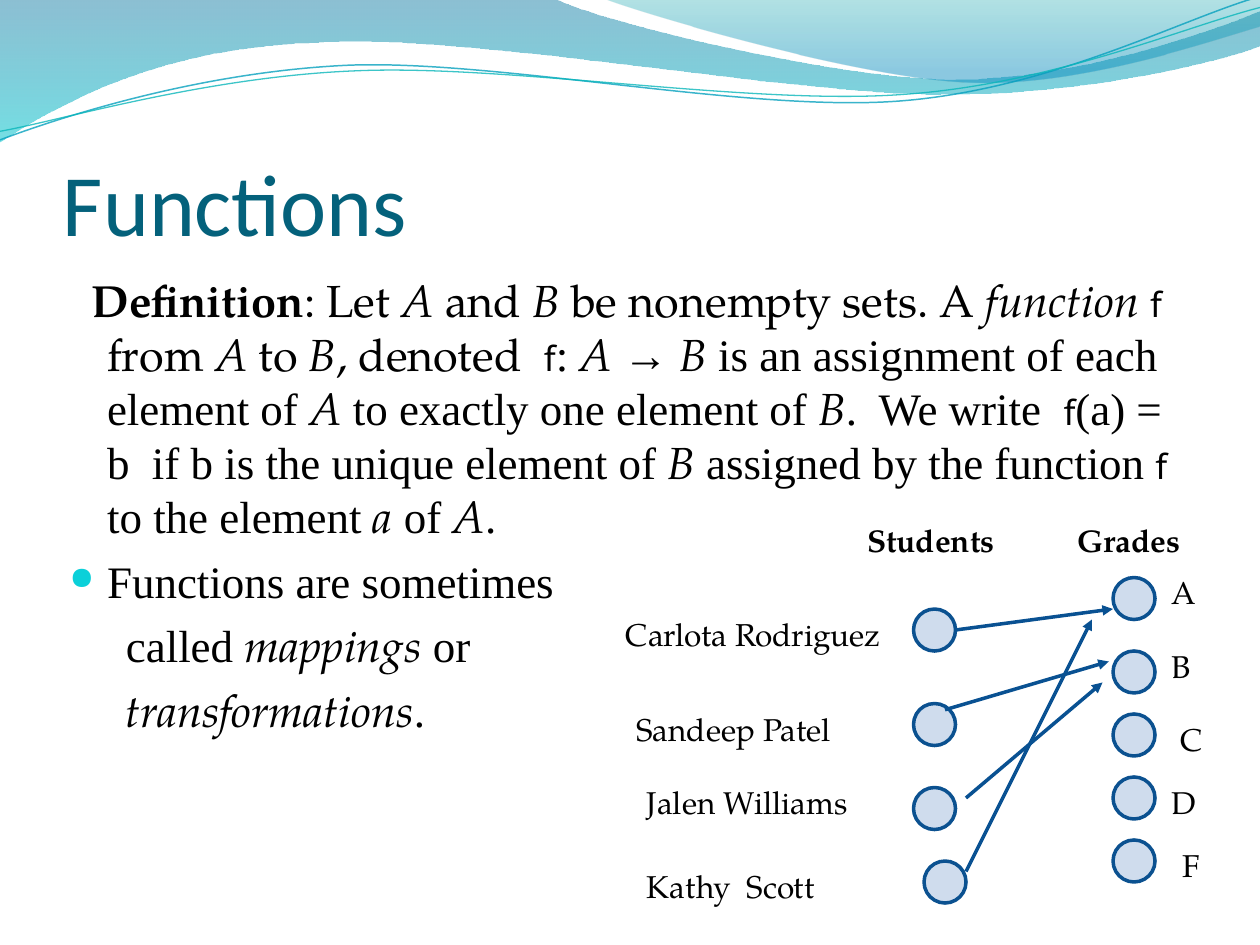
from dataclasses import dataclass
from typing import NamedTuple

from lxml import etree
from pptx import Presentation, util as u
from pptx.dml.color import RGBColor
from pptx.enum import shapes, text
from pptx.oxml.ns import qn

COLUMNS, ROWS = 120, 90
CELL = u.Inches(1 / 12)
CIRCLE = 4


class Face(NamedTuple):
    font: str
    size: float
    bold: bool = False
    italic: bool = False


@dataclass(frozen=True)
class Theme:
    title: str = "04617B"
    ink: str = "000000"
    bullet: str = "0BD0D9"
    circle: str = "4F81BD"
    outline: str = "0B5190"
    arrow: str = "095192"
    heading: Face = Face("Calibri", 50)
    serif: Face = Face("TeX Gyre Pagella", 25.7)
    strong: Face = Face("TeX Gyre Pagella", 25.7, bold=True)
    italic: Face = Face("TeX Gyre Pagella", 25.7, italic=True)
    times: Face = Face("Times New Roman", 25.7)
    symbol: Face = Face("Noto Sans", 19.8)
    label: Face = Face("TeX Gyre Pagella", 18)
    label_bold: Face = Face("TeX Gyre Pagella", 18, bold=True)


THEME = Theme()


class Box(NamedTuple):
    column: float
    row: float
    columns: float
    rows: float = 5


class Stop(NamedTuple):
    position: float
    color: str
    alpha: int


class Wave(NamedTuple):
    """Points are percentages of the slide's size; six numbers make a curve, two a straight line."""
    start: tuple
    segments: list
    stops: tuple = ()
    line: str = ""
    width: float = 0


class Node(NamedTuple):
    column: float
    row: float
    label: str
    label_box: Box


class Paragraph(NamedTuple):
    runs: list
    left: float
    indent: float = 0
    bullet: str = ""


WAVES = [
    Wave((0, 0), [(44, -0.1), (47.6, 2.3, 66.4, 8.4, 75.8, 8.4), (85.3, 8.4, 95.8, 3.5, 100, 1.2),
                  (100.1, 4.8), (98.3, 5.9, 87, 10.1, 74.6, 10), (62.2, 10, 38.2, 3.7, 25.7, 4.5),
                  (12.9, 4.8, 4.6, 11.1, -0.1, 15.1)],
         stops=(Stop(0, "00739E", 45), Stop(1, "00C5CE", 55))),
    Wave((47.9, -0.1), [(50.9, 1.5, 68.2, 8.3, 76.9, 8.7), (85.6, 9.2, 96.1, 4.3, 100, 2.8), (100, 0)],
         stops=(Stop(0, "009FA6", 30), Stop(0.8, "008ABE", 45))),
    Wave((0, 14.8), [(4.8, 12.4, 15.8, 7.6, 27.7, 6.9), (39.5, 6.3, 59.3, 11.9, 71.3, 10.7),
                     (83.3, 9.5, 93.8, 2, 99.8, -0.3)], line="05A0BE", width=0.85),
    Wave((0, 13.9), [(4.7, 12.8, 16.4, 8.1, 28.3, 7.5), (40.3, 6.8, 59.7, 11.2, 71.7, 10),
                     (83.6, 8.9, 94.1, 2.8, 100, 0.8)], line="08B6BA", width=0.75),
]

SET_A, SET_B = ("A", THEME.italic), ("B", THEME.italic)
F = ("f", THEME.symbol)
BODY = [
    Paragraph([
        ("Definition", THEME.strong), (": Let ", THEME.serif), SET_A, (" and ", THEME.serif),
        ("B ", THEME.italic), ("be nonempty sets. A ", THEME.serif), ("function ", THEME.italic), F,
        (" from ", THEME.serif), SET_A, (" to ", THEME.serif), SET_B,
        (", denoted  ", THEME.serif), F, (": ", THEME.times), SET_A, (" → ", THEME.times), SET_B,
        (" is an assignment of each element of ", THEME.times), SET_A,
        (" to exactly one element of ", THEME.times), SET_B, (".  We write  ", THEME.times), F,
        ("(a) = b  if b is the unique element of ", THEME.times), SET_B,
        (" assigned by the function ", THEME.times), F, (" to the element ", THEME.times),
        ("a", THEME.italic), (" of ", THEME.times), SET_A, (".", THEME.times),
    ], left=0.3, indent=-0.12),
    Paragraph([("Functions are sometimes", THEME.times)], left=0.3, indent=-0.3, bullet="●"),
    Paragraph([("called ", THEME.times), ("mappings", THEME.italic), (" or", THEME.times)], left=0.45),
    Paragraph([("transformations", THEME.italic), (".", THEME.times)], left=0.45),
]

NODES = [
    Node(87, 58, "Carlota Rodriguez", Box(59, 58, 28)),
    Node(87, 67, "Sandeep Patel", Box(60, 67, 26)),
    Node(87, 75, "Jalen Williams", Box(61, 74, 25)),
    Node(88, 82, "Kathy  Scott", Box(61, 82, 22)),
    Node(106, 55, "A", Box(111, 54, 4)),
    Node(106, 62, "B", Box(111, 61, 4)),
    Node(106, 68, "C", Box(111.8, 68, 4)),
    Node(106, 74, "D", Box(111, 74, 4)),
    Node(106, 80, "F", Box(112, 80, 4)),
]
HEADINGS = [("Students", Box(82, 49, 21)), ("Grades", Box(102, 49, 14))]
ARROWS = [((91, 60), (106, 58)), ((92, 76), (105, 65)),
          ((90, 67.6), (105.6, 63)), ((92, 83), (104, 59))]


def cells(*counts: float) -> list:
    return [round(count * CELL) for count in counts]


def rgb(value: str) -> RGBColor:
    return RGBColor.from_string(value)


def set_alpha(color_element, percent: int) -> None:
    etree.SubElement(color_element, qn("a:alpha"), val=str(percent * 1000))


def bend(shape, segments: list) -> None:
    """Turn each three line steps that stand for a curve into one cubic curve."""
    steps = iter(list(shape.element.iter(qn("a:lnTo"))))
    for segment in segments:
        first, *others = [next(steps) for _ in range(len(segment) // 2)]
        if others:
            first.tag_name = None
            curve = etree.Element(qn("a:cubicBezTo"))
            first.addprevious(curve)
            for step in (first, *others):
                curve.append(step[0])
                step.getparent().remove(step)


def draw_wave(slide, wave: Wave) -> None:
    points = [wave.start]
    for segment in wave.segments:
        points += zip(segment[::2], segment[1::2])
    start, *rest = [cells(x * COLUMNS / 100, y * ROWS / 100) for x, y in points]
    builder = slide.shapes.build_freeform(*start)
    builder.add_line_segments(rest, close=bool(wave.stops))
    shape = builder.convert_to_shape()
    bend(shape, wave.segments)
    shape.shadow.inherit = False
    if wave.stops:
        shape.line.fill.background()
        shape.fill.gradient()
        shape.fill.gradient_angle = 270
        for target, stop in zip(shape.fill.gradient_stops, wave.stops):
            target.position = stop.position
            target.color.rgb = rgb(stop.color)
        for color, stop in zip(shape.element.spPr.iter(qn("a:srgbClr")), wave.stops):
            set_alpha(color, stop.alpha)
    else:
        shape.fill.background()
        shape.line.color.rgb = rgb(wave.line)
        shape.line.width = u.Pt(wave.width)
        set_alpha(next(shape.element.spPr.iter(qn("a:srgbClr"))), 78)


def add_run(paragraph, content: str, face: Face, color: str = THEME.ink) -> None:
    run = paragraph.add_run()
    run.text = content
    font = run.font
    font.name, font.size = face.font, u.Pt(face.size)
    font.bold, font.italic = face.bold, face.italic
    font.color.rgb = rgb(color)


def add_frame(slide, box: Box, inset: float = 0.05):
    frame = slide.shapes.add_textbox(*cells(*box)).text_frame
    frame.word_wrap = True
    frame.margin_left = frame.margin_right = frame.margin_top = frame.margin_bottom = u.Inches(inset)
    return frame


def draw_label(slide, content: str, box: Box, face: Face) -> None:
    add_run(add_frame(slide, box).paragraphs[0], content, face)


def draw_body(slide, box: Box) -> None:
    frame = add_frame(slide, box)
    for index, item in enumerate(BODY):
        paragraph = frame.add_paragraph() if index else frame.paragraphs[0]
        paragraph.space_before = u.Pt(6 if index else 0)
        properties = paragraph._p.get_or_add_pPr()
        properties.set("marL", str(u.Inches(item.left)))
        properties.set("indent", str(u.Inches(item.indent)))
        if item.bullet:
            color = etree.SubElement(properties, qn("a:buClr"))
            etree.SubElement(color, qn("a:srgbClr"), val=THEME.bullet)
            etree.SubElement(properties, qn("a:buSzPct"), val="70000")
            etree.SubElement(properties, qn("a:buChar"), char=item.bullet)
        for content, face in item.runs:
            add_run(paragraph, content, face)


def draw_node(slide, node: Node) -> None:
    circle = slide.shapes.add_shape(shapes.MSO_SHAPE.OVAL, *cells(node.column, node.row, CIRCLE, CIRCLE))
    circle.shadow.inherit = False
    circle.fill.solid()
    circle.fill.fore_color.rgb = rgb(THEME.circle)
    set_alpha(next(circle.element.spPr.iter(qn("a:srgbClr"))), 27)
    circle.line.color.rgb = rgb(THEME.outline)
    circle.line.width = u.Pt(2)
    draw_label(slide, node.label, node.label_box, THEME.label)


def draw_arrow(slide, start: tuple, end: tuple) -> None:
    arrow = slide.shapes.add_connector(shapes.MSO_CONNECTOR.STRAIGHT, *cells(*start, *end))
    arrow.line.color.rgb = rgb(THEME.arrow)
    arrow.line.width = 0
    etree.SubElement(arrow.line._get_or_add_ln(), qn("a:tailEnd"), type="triangle")
    etree.SubElement(arrow.element.spPr, qn("a:effectLst"))


def main() -> None:
    presentation = Presentation()
    presentation.slide_width, presentation.slide_height = cells(COLUMNS, ROWS)
    slide = presentation.slides.add_slide(presentation.slide_layouts[6])
    for wave in WAVES:
        draw_wave(slide, wave)
    title = add_frame(slide, Box(6, 9.2, 108, 15), inset=0)
    title.vertical_anchor = text.MSO_ANCHOR.BOTTOM
    add_run(title.paragraphs[0], "Functions", THEME.heading, THEME.title)
    draw_body(slide, Box(6, 25.4, 108, 57.6))
    for content, box in HEADINGS:
        draw_label(slide, content, box, THEME.label_bold)
    for node in NODES:
        draw_node(slide, node)
    for start, end in ARROWS:
        draw_arrow(slide, start, end)
    presentation.save("out.pptx")


if __name__ == "__main__":
    main()
